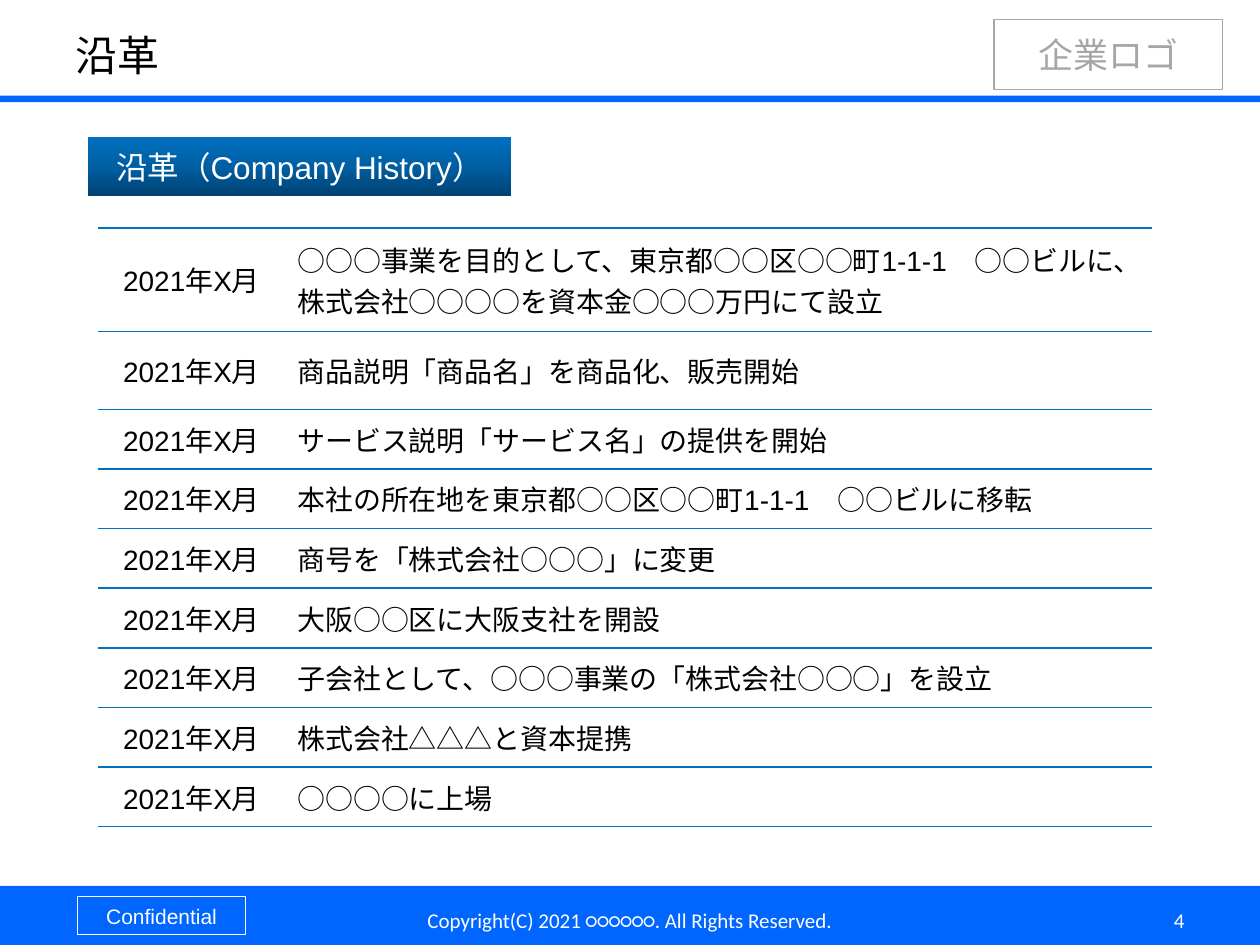
from copy import deepcopy

from lxml import etree
from pptx import Presentation
from pptx.dml import color
from pptx.enum import shapes, text
from pptx.oxml import ns
from pptx.util import Cm, Pt

BRAND, ACCENT, WHITE, BLACK, GREY = "0066FF", "0070C0", "FFFFFF", "000000", "A6A6A6"
LEFT, CENTER, RIGHT = text.PP_ALIGN.LEFT, text.PP_ALIGN.CENTER, text.PP_ALIGN.RIGHT

DATE = "2021年X月"
EVENTS = [
    "○○○事業を目的として、東京都○○区○○町1-1-1　○○ビルに、\n"
    "株式会社○○○○を資本金○○○万円にて設立",
    "商品説明「商品名」を商品化、販売開始",
    "サービス説明「サービス名」の提供を開始",
    "本社の所在地を東京都○○区○○町1-1-1　○○ビルに移転",
    "商号を「株式会社○○○」に変更",
    "大阪○○区に大阪支社を開設",
    "子会社として、○○○事業の「株式会社○○○」を設立",
    "株式会社△△△と資本提携",
    "○○○○に上場",
]


def rgb(value):
    return color.RGBColor.from_string(value)


def write(frame, wording, size, font, ink, align):
    frame.text = wording
    for paragraph in frame.paragraphs:
        paragraph.alignment = align
        for run in paragraph.runs:
            for name, value in {"name": font, "size": Pt(size)}.items():
                setattr(run.font, name, value)
            run.font.color.rgb = rgb(ink)


def add_label(slide, box, *style):
    label = slide.shapes.add_textbox(*map(Cm, box)).text_frame
    for name, value in {"word_wrap": True, "vertical_anchor": text.MSO_ANCHOR.MIDDLE}.items():
        setattr(label, name, value)
    write(label, *style)


def add_panel(slide, box, fill=None, line=None, style=None):
    panel = slide.shapes.add_shape(shapes.MSO_SHAPE.RECTANGLE, *map(Cm, box))
    panel.shadow.inherit = False
    if fill:
        panel.fill.solid()
        panel.fill.fore_color.rgb = rgb(fill)
    else:
        panel.fill.background()
    if line:
        panel.line.color.rgb = rgb(line)
        panel.line.width = Pt(0.75)
    else:
        panel.line.fill.background()
    if style:
        panel.text_frame.vertical_anchor = text.MSO_ANCHOR.MIDDLE
        write(panel.text_frame, *style)
    return panel


def header(slide, left, top, width, height):
    # Rule under the title, logo frame, title
    add_panel(slide, (left, top + height - 0.13, width, 0.13), fill=BRAND)
    add_panel(slide, (left + width - 5.36, top + 0.4, 4.6, 1.4), line=GREY,
              style=("企業ロゴ", 20, "Calibri", GREY, CENTER))
    add_label(slide, (left + 1.27, top + 0.4, 18.4, 1.4), "沿革", 24, "Calibri", BLACK, LEFT)


def footer(slide, left, top, width, height):
    # Band, confidentiality mark, copyright, page number
    add_panel(slide, (left, top, width, height), fill=BRAND)
    add_panel(slide, (left + 1.57, top + 0.22, 3.38, 0.76), line=WHITE,
              style=("Confidential", 12, "Arial", WHITE, CENTER))
    note_top = top + 0.18
    add_label(slide, (left + 7.39, note_top, 10.62, 1.02),
              "Copyright(C) 2021 ○○○○○○. All Rights Reserved.", 12, "Calibri", WHITE, CENTER)
    add_label(slide, (left + width - 7.19, note_top, 5.92, 1.02), "4", 12, "Calibri", WHITE, RIGHT)


def section_heading(slide, *box):
    heading = add_panel(slide, box, style=("沿革（Company History）", 18, "Arial", WHITE, CENTER))
    heading.fill.gradient()
    heading.fill.gradient_angle = 90
    # A third stop halfway between the two default ones
    first = heading._element.spPr.find(".//" + ns.qn("a:gs"))
    middle = deepcopy(first)
    middle.set("pos", "50000")
    first.addnext(middle)
    for stop, (position, shade) in zip(heading.fill.gradient_stops,
                                       [(0, "004272"), (0.5, "005EA2"), (1, ACCENT)]):
        stop.position = position
        stop.color.rgb = rgb(shade)


def rule_cell(cell):
    # Horizontal rules only
    properties = cell._tc.get_or_add_tcPr()
    for side in "LRTB":
        edge = etree.SubElement(properties, ns.qn("a:ln" + side), w=str(Pt(1)))
        if side in "LR":
            etree.SubElement(edge, ns.qn("a:noFill"))
        else:
            paint = etree.SubElement(edge, ns.qn("a:solidFill"))
            etree.SubElement(paint, ns.qn("a:srgbClr"), val=ACCENT)
    cell.fill.background()


def history(slide, left, top, width, height):
    date_width, tall_rows = 3.76, [2.08, 1.57]
    plain_row = (height - sum(tall_rows)) / (len(EVENTS) - len(tall_rows))
    table = slide.shapes.add_table(len(EVENTS), 2, *map(Cm, (left, top, width, height))).table
    table.first_row = table.horz_banding = False
    for column, span in zip(table.columns, (date_width, width - date_width)):
        column.width = Cm(span)
    for index, event in enumerate(EVENTS):
        table.rows[index].height = Cm(tall_rows[index] if index < len(tall_rows) else plain_row)
        for cell, wording, align in zip(table.rows[index].cells, (DATE, event), (CENTER, LEFT)):
            cell.vertical_anchor = text.MSO_ANCHOR.MIDDLE
            rule_cell(cell)
            write(cell.text_frame, wording, 16, "Arial", BLACK, align)


def main():
    deck = Presentation()
    deck.slide_width, deck.slide_height = Cm(25.4), Cm(19.05)
    slide = deck.slides.add_slide(deck.slide_layouts[6])
    header(slide, 0, 0, 25.4, 2.06)
    footer(slide, 0, 17.86, 25.4, 1.19)
    history(slide, 1.98, 4.6, 21.24, 12.07)
    section_heading(slide, 1.78, 2.77, 8.53, 1.19)
    deck.save("out.pptx")


if __name__ == "__main__":
    main()
